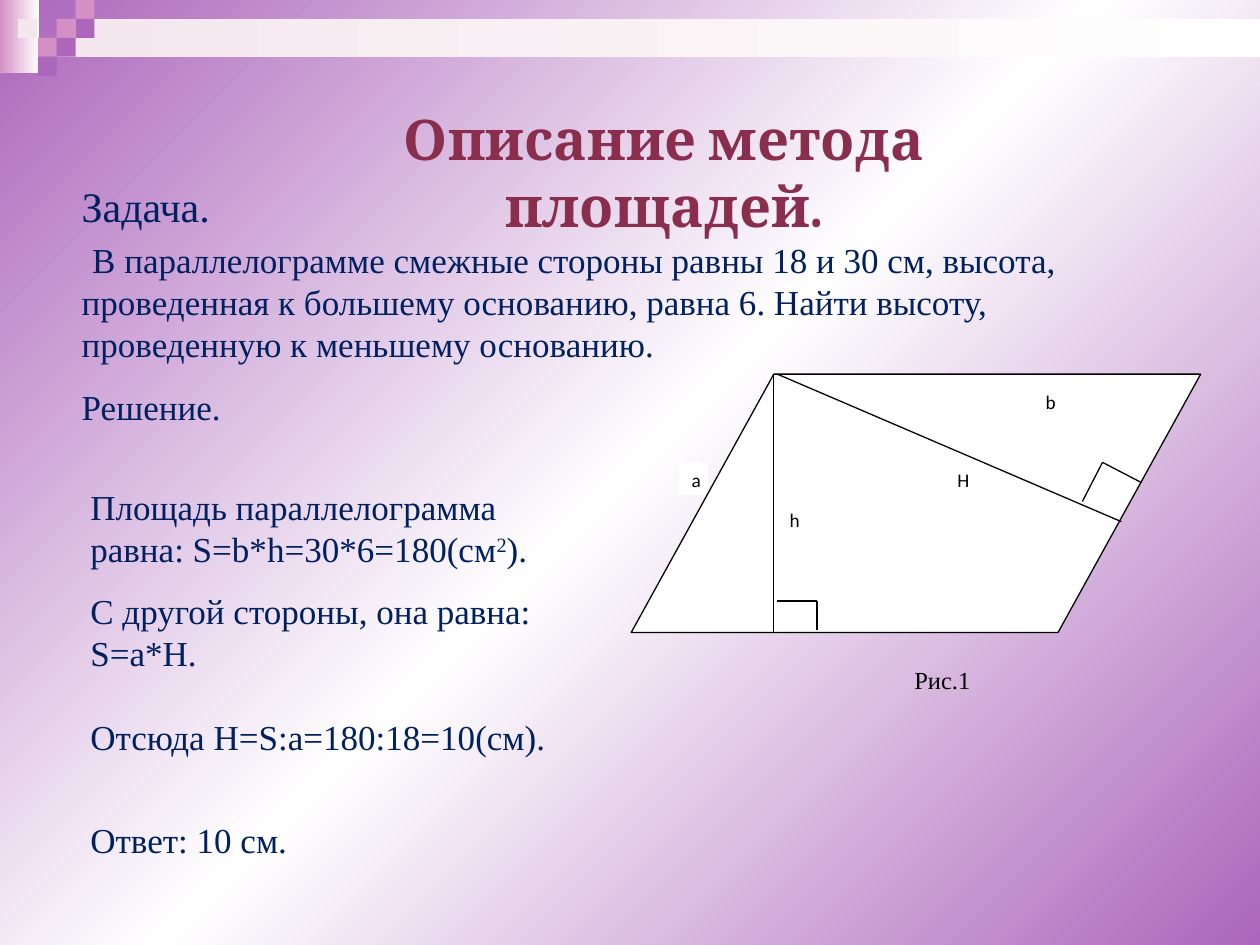
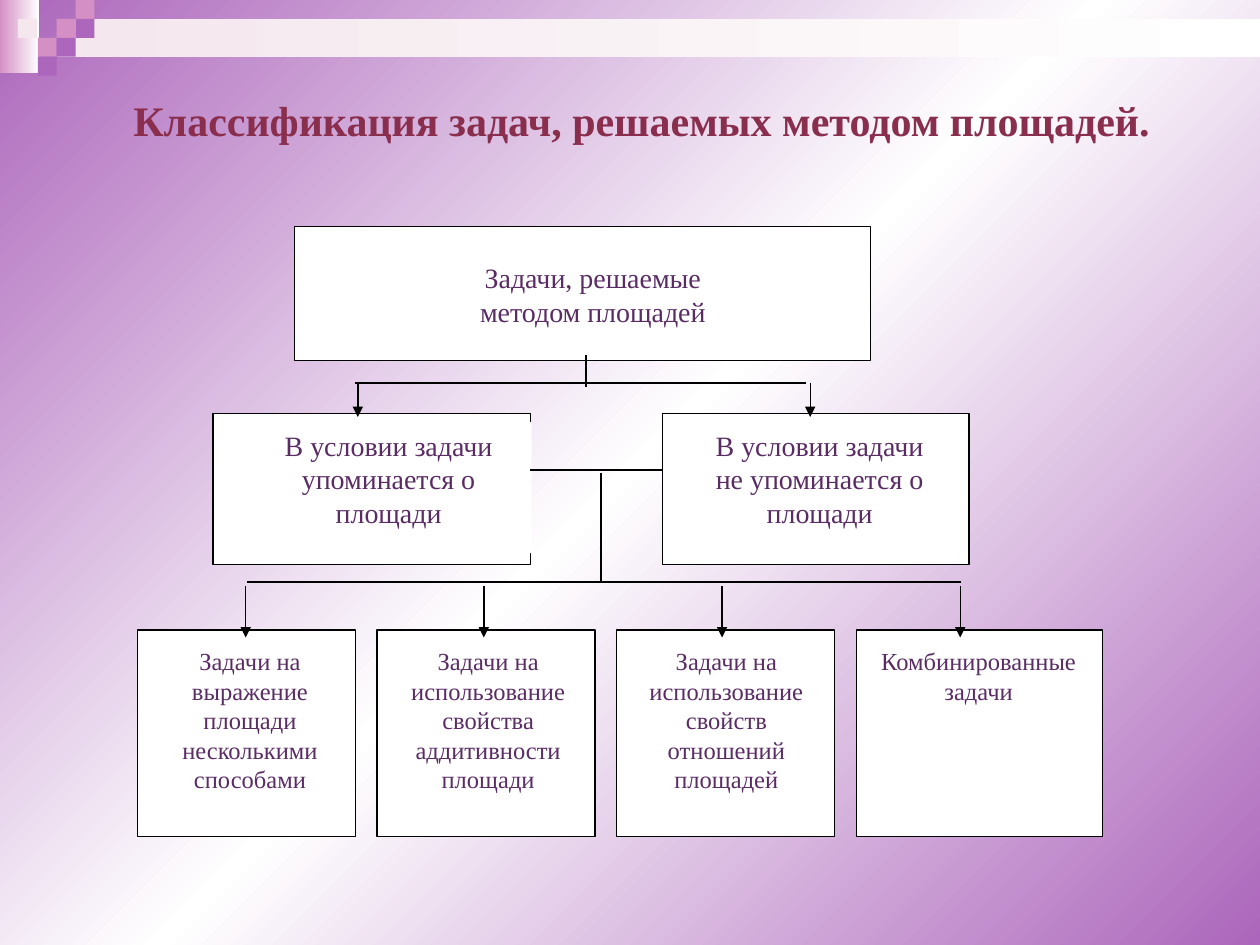
from dataclasses import dataclass
from typing import NamedTuple

from lxml.etree import SubElement
from pptx import Presentation
from pptx.dml.color import RGBColor
from pptx.enum.shapes import MSO_CONNECTOR, MSO_SHAPE as Preset
from pptx.enum.text import PP_ALIGN as Align
from pptx.oxml.ns import qn
from pptx.util import Pt

# Shared colours and fonts
PURPLE, PINK, PALE = "AC66BB", "D490C5", "F4E7ED"
WHITE, BLACK = "FFFFFF", "000000"
SERIF = "Times New Roman"
TILE = 10.8


class Place(NamedTuple):
    left: float
    top: float
    width: float
    height: float


class Segment(NamedTuple):
    x1: float
    y1: float
    x2: float
    y2: float


@dataclass(frozen=True)
class Style:
    font: str
    size: float
    colour: str
    bold: bool = False
    align: Align = Align.LEFT


@dataclass(frozen=True)
class Para:
    text: str  # parts between ^ marks are superscript
    size: float = 0
    before: float = 0
    indent: float = 0


@dataclass(frozen=True)
class Card:
    frame: Place
    label: Place
    lines: tuple[str, ...]
    style: Style
    preset: Preset = Preset.FLOWCHART_PROCESS


TITLE = Style("Cambria", 32, "8A2E4E", True, Align.CENTER)
SUBTITLE = Style(SERIF, 24, "8A2E4E", True)
BODY = Style(SERIF, 20, "002060")
CAPTION = Style(SERIF, 14, BLACK)
MARK = Style("Calibri", 11, BLACK)
GROUP = Style(SERIF, 16, "5A2C64", align=Align.CENTER)
LEAF = Style(SERIF, 14, "5A2C64", align=Align.CENTER)


def rgb(colour: str) -> RGBColor:
    return RGBColor.from_string(colour)


def pts(lengths) -> list:
    return [Pt(length) for length in lengths]


def set_gradient(fill, owner, colours: tuple[str, ...], angle: float) -> None:
    fill.gradient()
    fill.gradient_angle = angle
    stops = next(owner.element.iter(qn("a:gsLst")))
    stops.clear()
    for i, colour in enumerate(colours):
        stop = SubElement(stops, qn("a:gs"), pos=str(100000 * i // (len(colours) - 1)))
        SubElement(stop, qn("a:srgbClr"), val=colour)


def add_box(slide, place: Place, *fills: str, outlined: bool = False,
            preset: Preset = Preset.RECTANGLE):
    box = slide.shapes.add_shape(preset, *pts(place))
    box.shadow.inherit = False
    if len(fills) > 1:
        set_gradient(box.fill, box, fills, 0)
    else:
        box.fill.solid()
        box.fill.fore_color.rgb = rgb(fills[0])
    if outlined:
        box.line.color.rgb = rgb(BLACK)
        box.line.width = Pt(0.75)
    else:
        box.line.fill.background()
    return box


def write(shape, style: Style, *paras: Para, inset_top: float = 3.6) -> None:
    frame = shape.text_frame
    frame.word_wrap = True
    frame.margin_top = Pt(inset_top)
    frame.vertical_anchor = 1  # top
    for i, para in enumerate(paras):
        line = frame.add_paragraph() if i else frame.paragraphs[0]
        line.alignment = style.align
        line.space_before = Pt(para.before)
        if para.indent:
            line._p.get_or_add_pPr().set("indent", str(Pt(para.indent)))
        for j, part in enumerate(para.text.split("^")):
            run = line.add_run()
            run.text = part
            if j % 2:
                run._r.get_or_add_rPr().set("baseline", "30000")
        font = line.font
        font.name, font.bold = style.font, style.bold
        font.size = Pt(para.size or style.size)
        font.color.rgb = rgb(style.colour)


def add_text(slide, place: Place, style: Style, *paras: Para, inset_top: float = 3.6) -> None:
    write(slide.shapes.add_textbox(*pts(place)), style, *paras, inset_top=inset_top)


def add_label(slide, place: Place, style: Style, *lines: str) -> None:
    write(add_box(slide, place, WHITE), style, *map(Para, lines))


def add_line(slide, segment: Segment, arrow: bool = False) -> None:
    line = slide.shapes.add_connector(MSO_CONNECTOR.STRAIGHT, *pts(segment))
    line.line.color.rgb = rgb(BLACK)
    line.line.width = Pt(0.75)
    if arrow:
        SubElement(line.line._get_or_add_ln(), qn("a:tailEnd"), type="triangle")
    SubElement(line.element.spPr, qn("a:effectLst"))


def add_card(slide, card: Card) -> None:
    add_box(slide, card.frame, WHITE, outlined=True, preset=card.preset)
    add_label(slide, card.label, card.style, *card.lines)


def new_slide(deck):
    """Blank slide with the diagonal background and the tiled top band."""
    slide = deck.slides.add_slide(deck.slide_layouts[6])
    set_gradient(slide.background.fill, slide, (PURPLE, WHITE, PURPLE), 315)
    add_box(slide, Place(0, 0, 22.3, 41.8), PINK, WHITE)
    add_box(slide, Place(32.4, TILE, 687.6, 21.6), PALE, WHITE)
    tiles = ((3, 1, PINK), (4, 0, PINK), (4, 1, PURPLE), (2, 2, PINK),
             (0.95, 1, PALE), (3, 2, PURPLE), (2, 3, PURPLE))
    for column, row, colour in tiles:
        add_box(slide, Place(column * TILE, row * TILE, TILE, TILE), colour)
    # Purple tile between the corner strip and the upper pink tile
    return slide


def build_method(deck) -> None:
    slide = new_slide(deck)

    # Problem and solution
    add_text(slide, Place(39.6, 90, 646.6, 143.3), BODY,
             Para("Задача.", size=24),
             Para("В параллелограмме смежные стороны равны 18 и 30 см, высота, "
                  "проведенная к большему основанию, равна 6. Найти высоту, "
                  "проведенную к меньшему основанию.", before=4, indent=6),
             inset_top=13.3)
    add_text(slide, Place(39.6, 191.5, 140.4, 77.8), BODY, Para("Решение."), inset_top=29)
    add_text(slide, Place(44.6, 247.7, 292.3, 269.3), BODY,
             Para("Площадь параллелограмма равна: S=b*h=30*6=180(см^2^)."),
             Para("С другой стороны, она равна: S=a*Н.", before=11),
             Para("Отсюда H=S:а=180:18=10(см).", before=24),
             Para("Ответ: 10 см.", before=35),
             inset_top=30)

    # Parallelogram with its heights and right angles
    add_label(slide, Place(388.1, 264.2, 16.6, 18.7), MARK, "а")
    figure = add_box(slide, Place(360.7, 213.8, 325.4, 147.6), WHITE,
                     outlined=True, preset=Preset.PARALLELOGRAM)
    figure.adjustments[0] = 0.552
    for name, place in (("h", Place(444.2, 286.6, 30.2, 43.9)),
                        ("b", Place(590.4, 219.6, 30.2, 16.6)),
                        ("H", Place(540, 264.2, 16.6, 16.6))):
        add_label(slide, place, MARK, name)
    for segment in (Segment(444.2, 213.8, 640.8, 298.1),
                    Segment(442.1, 213.8, 442.1, 361.4),
                    Segment(652.3, 275.8, 630, 264.2),
                    Segment(630, 264.2, 618.5, 286.6),
                    Segment(444.2, 343.4, 466.9, 343.4),
                    Segment(466.9, 343.4, 466.9, 360)):
        add_line(slide, segment)

    add_text(slide, Place(140.4, 56.2, 478.1, 46.1), TITLE, Para("Описание метода площадей."))
    add_text(slide, Place(511.9, 376.6, 60.5, 24.5), CAPTION, Para("Рис.1", indent=3.5))


def build_classes(deck) -> None:
    slide = new_slide(deck)

    # Two groups and the root above them
    for card in (
        Card(Place(121.7, 236.2, 181.4, 86.4), Place(140.4, 241.2, 163.4, 74.9),
             ("В условии задачи", "упоминается о", "площади"), GROUP),
        Card(Place(378.7, 236.2, 175, 86.4), Place(388.1, 241.2, 160.6, 74.9),
             ("В условии задачи", "не упоминается о", "площади"), GROUP),
        Card(Place(168.5, 129.6, 329, 76.3), Place(244.1, 145.4, 189.4, 52.6),
             ("Задачи, решаемые", "методом площадей"), GROUP),
    ):
        add_card(slide, card)

    # Kinds of problems; the last card is wider
    kinds = (("Задачи на", "выражение", "площади", "несколькими", "способами"),
             ("Задачи на", "использование", "свойства", "аддитивности", "площади"),
             ("Задачи на", "использование", "свойств", "отношений", "площадей"),
             ("Комбинированные задачи",))
    for i, lines in enumerate(kinds):
        extra = 16 if i == len(kinds) - 1 else 0
        add_card(slide, Card(Place(78.5 + 137 * i, 360, 124.6 + extra, 118.1),
                             Place(86.4 + 136.1 * i, 365.8, 113 + extra, 105.8),
                             lines, LEAF, Preset.RECTANGLE))

    # Branches, then arrows down to the cards
    for segment in (Segment(203, 218.9, 460.8, 218.9),
                    Segment(334.8, 221, 334.8, 203),
                    Segment(141.1, 332.6, 549.4, 332.6),
                    Segment(303.1, 268.6, 378.7, 268.6),
                    Segment(343.4, 270, 343.4, 331.9)):
        add_line(slide, segment)
    for i in range(len(kinds)):
        x = 140.4 + 136.1 * i
        add_line(slide, Segment(x, 334.8, x, 364.3), arrow=True)
    for x in (204.5, 463):
        add_line(slide, Segment(x, 218.9, x, 238.3), arrow=True)

    add_text(slide, Place(33.8, 50.4, 641.5, 36.7), SUBTITLE,
             Para("Классификация задач, решаемых методом площадей.", indent=35.3))


def main() -> None:
    deck = Presentation()
    deck.slide_width, deck.slide_height = Pt(720), Pt(540)
    build_method(deck)
    build_classes(deck)
    deck.save("out.pptx")


if __name__ == "__main__":
    main()
